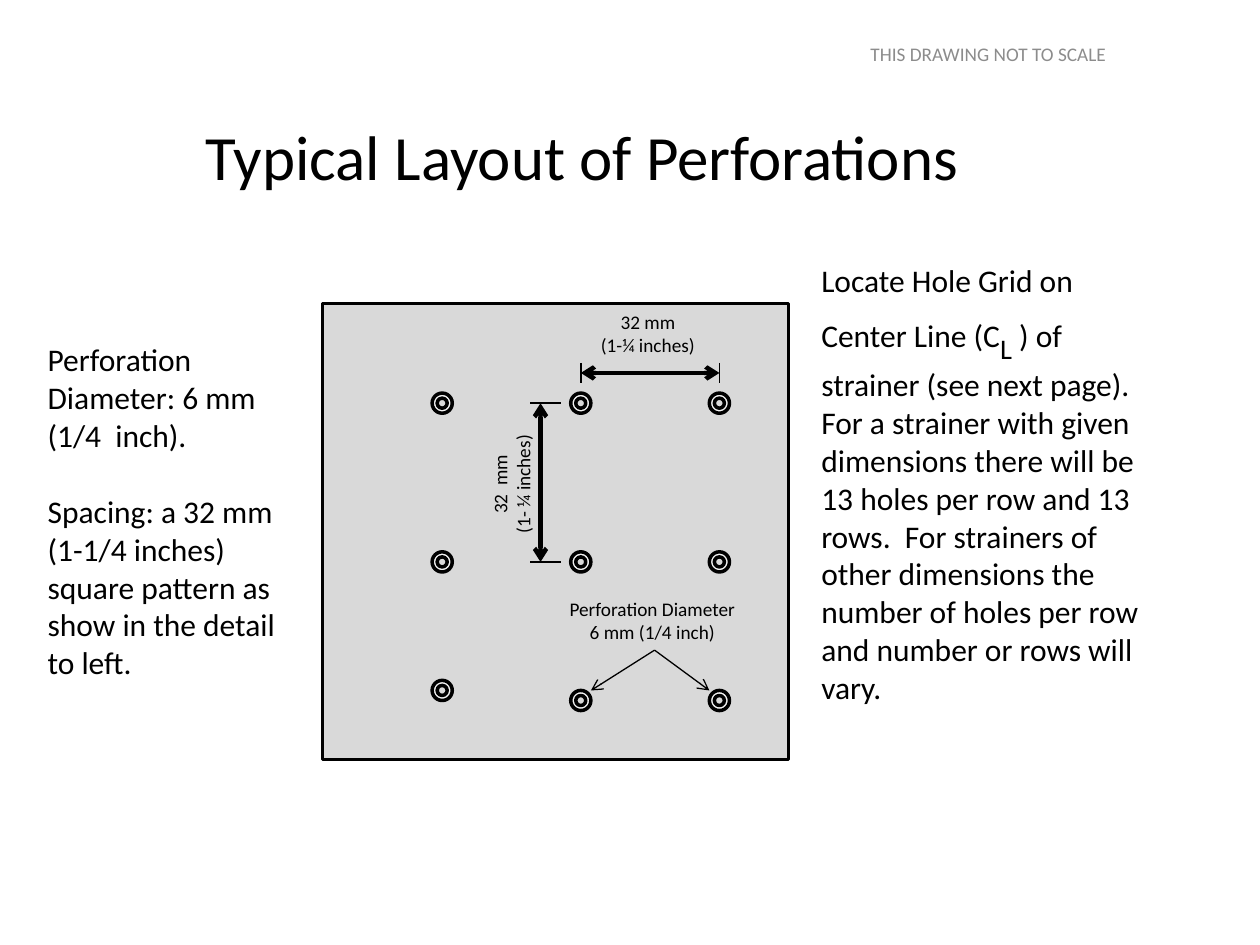
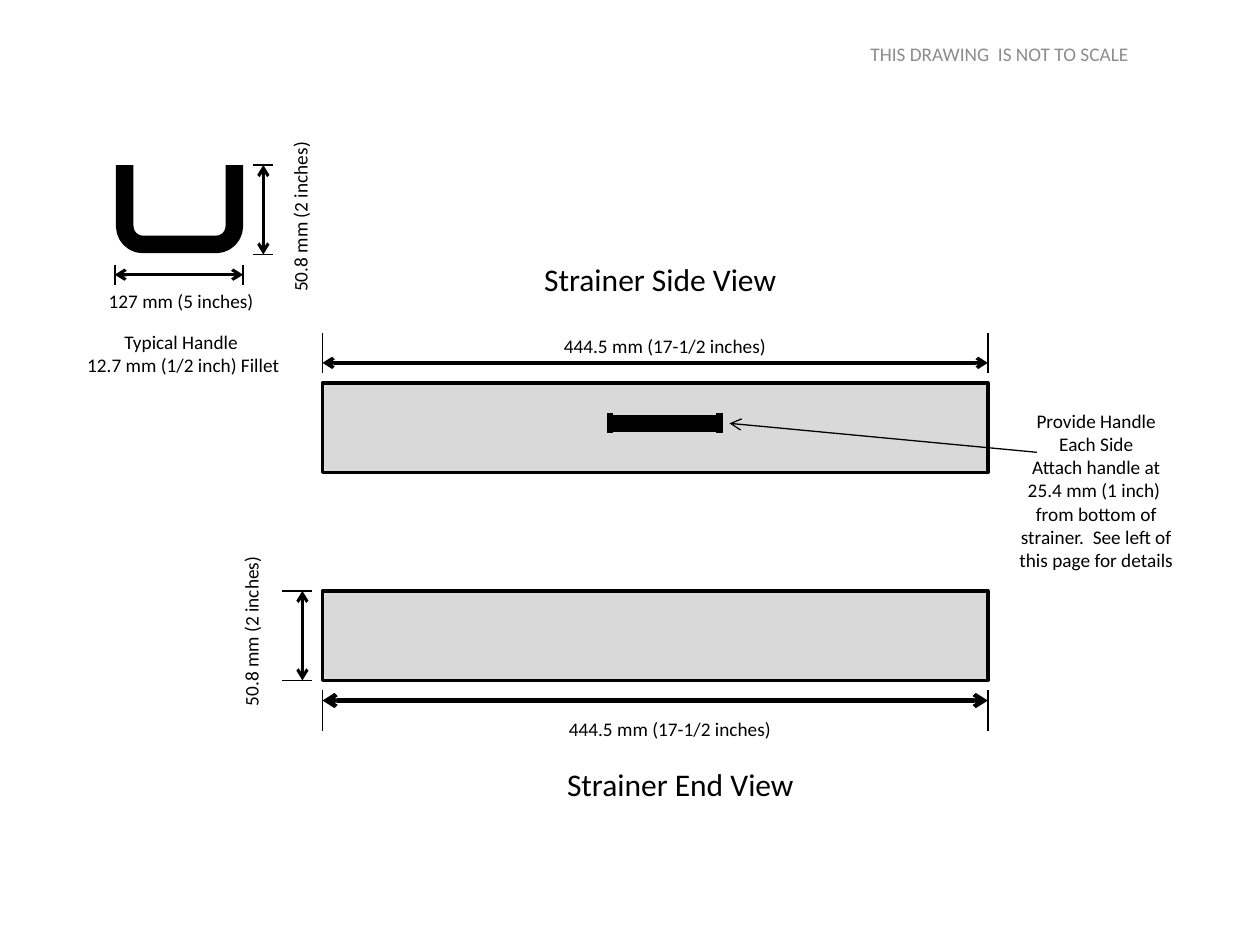
from dataclasses import dataclass

import lxml.etree
import pptx
import pptx.dml.color
import pptx.enum.shapes
import pptx.enum.text
import pptx.oxml.ns
import pptx.util

Inches = pptx.util.Inches
SHAPES = pptx.enum.shapes.MSO_SHAPE
ALIGN = pptx.enum.text.PP_ALIGN
ANCHOR = pptx.enum.text.MSO_ANCHOR


@dataclass(frozen=True)
class Theme:
    font: str = "Calibri"
    ink: str = "000000"
    steel: str = "D9D9D9"
    hole: str = "F2F2F2"
    paper: str = "FFFFFF"
    muted: str = "8C8C8C"
    title_size: int = 36
    body_size: int = 18
    subscript_size: int = 28
    label_size: int = 11
    outline: float = 2
    witness: float = 1
    leader: float = 0.75
    handle: float = 10


@dataclass(frozen=True)
class Box:
    left: float
    top: float
    width: float
    height: float

    @property
    def right(self):
        return self.left + self.width

    @property
    def bottom(self):
        return self.top + self.height

    def inner(self, left, top, width, height):
        return Box(self.left + left, self.top + top, width, height)

    def lengths(self):
        return [Inches(value) for value in (self.left, self.top, self.width, self.height)]


THEME = Theme()


def rgb(color):
    return pptx.dml.color.RGBColor.from_string(color)


# Shared drawing parts
def format_run(run, size, color=THEME.ink):
    run.font.name = THEME.font
    run.font.size = pptx.util.Pt(size)
    run.font.color.rgb = rgb(color)


def add_text(slide, box, lines, size=THEME.label_size, color=THEME.ink,
             align=ALIGN.CENTER, anchor=ANCHOR.TOP, rotation=0):
    text_box = slide.shapes.add_textbox(*box.lengths())
    text_box.rotation = rotation
    frame = text_box.text_frame
    frame.word_wrap = True
    frame.vertical_anchor = anchor
    frame.text = "\n".join(lines)
    for paragraph in frame.paragraphs:
        paragraph.alignment = align
        for run in paragraph.runs:
            format_run(run, size, color)
    return text_box


def add_shape(slide, kind, box, fill=None, line_width=None):
    shape = slide.shapes.add_shape(kind, *box.lengths())
    shape.shadow.inherit = False
    if fill:
        shape.fill.solid()
        shape.fill.fore_color.rgb = rgb(fill)
    else:
        shape.fill.background()
    if line_width:
        shape.line.color.rgb = rgb(THEME.ink)
        shape.line.width = pptx.util.Pt(line_width)
    else:
        shape.line.fill.background()
    return shape


def add_line(slide, start, end, width, arrows=()):
    """Arrows names the ends that carry an arrowhead: headEnd, tailEnd."""
    points = [Inches(value) for value in (*start, *end)]
    line = slide.shapes.add_connector(pptx.enum.shapes.MSO_CONNECTOR.STRAIGHT, *points)
    line.line.color.rgb = rgb(THEME.ink)
    line.line.width = pptx.util.Pt(width)
    qualified = pptx.oxml.ns.qn
    outline = line.line._get_or_add_ln()
    for arrow in arrows:
        lxml.etree.SubElement(outline, qualified("a:" + arrow), type="arrow")
    lxml.etree.SubElement(line._element.spPr, qualified("a:effectLst"))
    return line


def add_dimension(slide, start, end, width, before=0.08, after=0.08):
    """Draw a two-headed arrow with a witness line across each end."""
    add_line(slide, start, end, width, ("headEnd", "tailEnd"))
    horizontal = start[1] == end[1]
    for x, y in (start, end):
        if horizontal:
            add_line(slide, (x, y - before), (x, y + after), THEME.witness)
        else:
            add_line(slide, (x - before, y), (x + after, y), THEME.witness)


def add_scale_note(slide, text):
    add_text(slide, Box(6.81, 0.29, 2.56, 0.5), [text], color=THEME.muted, align=ALIGN.LEFT)


# Perforations slide
def draw_perforated_plate(slide, plate):
    add_shape(slide, SHAPES.RECTANGLE, plate, THEME.steel, THEME.outline)
    columns = [plate.left + 0.95 + 1.1 * index for index in range(3)]
    rows = [plate.top + offset for offset in (0.79, 2.05, 3.07)]
    diameter = 0.16
    for row, y in enumerate(rows):
        for column, x in enumerate(columns):
            # The last row steps down after its first hole
            step = 0.08 if row == 2 and column > 0 else 0
            hole = Box(x - diameter / 2, y + step - diameter / 2, diameter, diameter)
            add_shape(slide, SHAPES.DONUT, hole, THEME.hole, THEME.outline)

    # Spacing across and down
    across, down = plate.top + 0.55, plate.left + 1.73
    add_dimension(slide, (columns[1], across), (columns[2], across), 2.5)
    add_dimension(slide, (down, rows[0]), (down, rows[1]), 2.5, after=0.16)
    add_text(slide, plate.inner(1.97, 0, 1.26, 0.47), ["32 mm ", "(1-¼ inches) "])
    add_text(slide, plate.inner(0.87, 1.18, 1.26, 0.47),
             ["32  mm ", "(1- ¼ inches) "], rotation=270)

    # Diameter label with leaders to two holes
    label = add_text(slide, plate.inner(1.73, 2.28, 1.81, 0.47),
                     ["Perforation Diameter ", "6 mm (1/4 inch) "])
    for x in (columns[1] + diameter / 2, columns[2] - diameter / 2):
        leader = add_line(slide, (plate.left + 2.64, plate.top + 2.75), (x, rows[2]),
                          THEME.leader, ("tailEnd",))
        leader.begin_connect(label, 2)


def write_grid_note(slide, box):
    note = add_text(slide, box, ["Locate Hole Grid on Center Line (C"],
                    THEME.body_size, align=ALIGN.LEFT)
    paragraph = note.text_frame.paragraphs[0]
    subscript = paragraph.add_run()
    subscript.text = "L"
    format_run(subscript, THEME.subscript_size)
    subscript._r.get_or_add_rPr().set("baseline", "-25000")
    rest = paragraph.add_run()
    rest.text = (" ) of strainer (see next page).  For a strainer with given dimensions "
                 "there will be 13 holes per row and 13 rows.  For strainers of other "
                 "dimensions the number of holes per row and number or rows will vary.")
    format_run(rest, THEME.body_size)


def write_spacing_note(slide, box):
    note = add_text(slide, box, [
        "Perforation Diameter: 6 mm (1/4  inch).",
        "Spacing: a 32 mm",
        "(1-1/4 inches) square pattern as show in the detail to left.",
    ], THEME.body_size, align=ALIGN.LEFT)
    note.text_frame.paragraphs[1].space_before = pptx.util.Pt(22)


def build_perforations_slide(slide):
    add_scale_note(slide, "THIS DRAWING NOT TO SCALE")
    add_text(slide, Box(0.12, 0.61, 9, 1.25), ["Typical Layout of Perforations"],
             THEME.title_size, anchor=ANCHOR.MIDDLE)
    draw_perforated_plate(slide, Box(2.56, 2.41, 3.7, 3.62))
    write_grid_note(slide, Box(6.42, 2.02, 2.83, 3.44))
    write_spacing_note(slide, Box(0.28, 2.65, 2.2, 3.13))


# Strainer views slide
def write_view_title(slide, box, text):
    add_text(slide, box, [text], THEME.body_size, anchor=ANCHOR.MIDDLE)


def draw_handle_detail(slide, box):
    # Rounded bar whose upper part is cut off to leave a U
    add_shape(slide, SHAPES.ROUNDED_RECTANGLE, box.inner(0.08, -0.39, 0.87, 1.02),
              line_width=THEME.handle)
    add_shape(slide, SHAPES.RECTANGLE, box.inner(-0.24, -0.63, 1.5, 0.63), THEME.paper)

    across, down = box.bottom + 0.16, box.right + 0.16
    add_dimension(slide, (box.left, across), (box.right, across), 1.75)
    add_dimension(slide, (down, box.top), (down, box.bottom), 1.75)
    add_text(slide, box.inner(0.53, 0.25, 1.89, 0.29), ["50.8 mm (2 inches) "], rotation=270)
    add_text(slide, box.inner(-0.4, 0.94, 1.89, 0.29), ["127 mm (5 inches) "])
    add_text(slide, box.inner(-0.32, 1.26, 1.73, 0.47),
             ["Typical Handle ", "12.7 mm (1/2 inch) Fillet"])


def draw_side_view(slide, box):
    write_view_title(slide, box.inner(1.34, -1.1, 2.68, 0.55), "Strainer Side View")
    add_shape(slide, SHAPES.RECTANGLE, box, THEME.steel, THEME.outline)
    across = box.top - 0.16
    add_dimension(slide, (box.left, across), (box.right, across), 2, before=0.24)
    add_text(slide, box.inner(1.81, -0.44, 1.85, 0.29), ["444.5 mm (17-1/2 inches) "])

    # Handle seen from the front
    left, right, middle = box.left + 2.28, box.left + 3.15, box.top + 0.32
    add_line(slide, (left, middle), (right, middle), THEME.handle)
    for x in (left, right):
        add_line(slide, (x, middle - 0.08), (x, middle + 0.08), 3.75)

    # Handle callout
    add_line(slide, (box.right + 0.39, box.top + 0.55), (right + 0.08, middle),
             THEME.leader, ("tailEnd",))
    add_text(slide, box.inner(5.43, 0.16, 1.42, 1.4), [
        "Provide Handle Each Side",
        "Attach handle at 25.4 mm (1 inch)  from bottom of strainer.  "
        "See left of this page for details ",
    ])


def draw_end_view(slide, box):
    add_shape(slide, SHAPES.RECTANGLE, box, THEME.steel, THEME.outline)
    across, down = box.bottom + 0.16, box.left - 0.16
    add_dimension(slide, (box.left, across), (box.right, across), 2.5, after=0.24)
    add_dimension(slide, (down, box.top), (down, box.bottom), 1.75, before=0.16)
    add_text(slide, box.inner(1.85, 0.95, 1.85, 0.29), ["444.5 mm (17-1/2 inches) "])
    add_text(slide, box.inner(-1.51, 0.16, 1.89, 0.29), ["50.8 mm (2 inches) "], rotation=270)
    write_view_title(slide, box.inner(1.5, 1.26, 2.68, 0.55), "Strainer End View")


def build_views_slide(slide):
    add_scale_note(slide, "THIS DRAWING  IS NOT TO SCALE")
    draw_handle_detail(slide, Box(0.91, 1.31, 1.02, 0.71))
    draw_side_view(slide, Box(2.56, 3.04, 5.28, 0.71))
    draw_end_view(slide, Box(2.56, 4.69, 5.28, 0.71))


def main():
    presentation = pptx.Presentation()
    presentation.slide_width = Inches(10)
    presentation.slide_height = Inches(7.5)
    blank = presentation.slide_layouts[6]
    for build in (build_perforations_slide, build_views_slide):
        build(presentation.slides.add_slide(blank))
    presentation.save("out.pptx")


if __name__ == "__main__":
    main()
